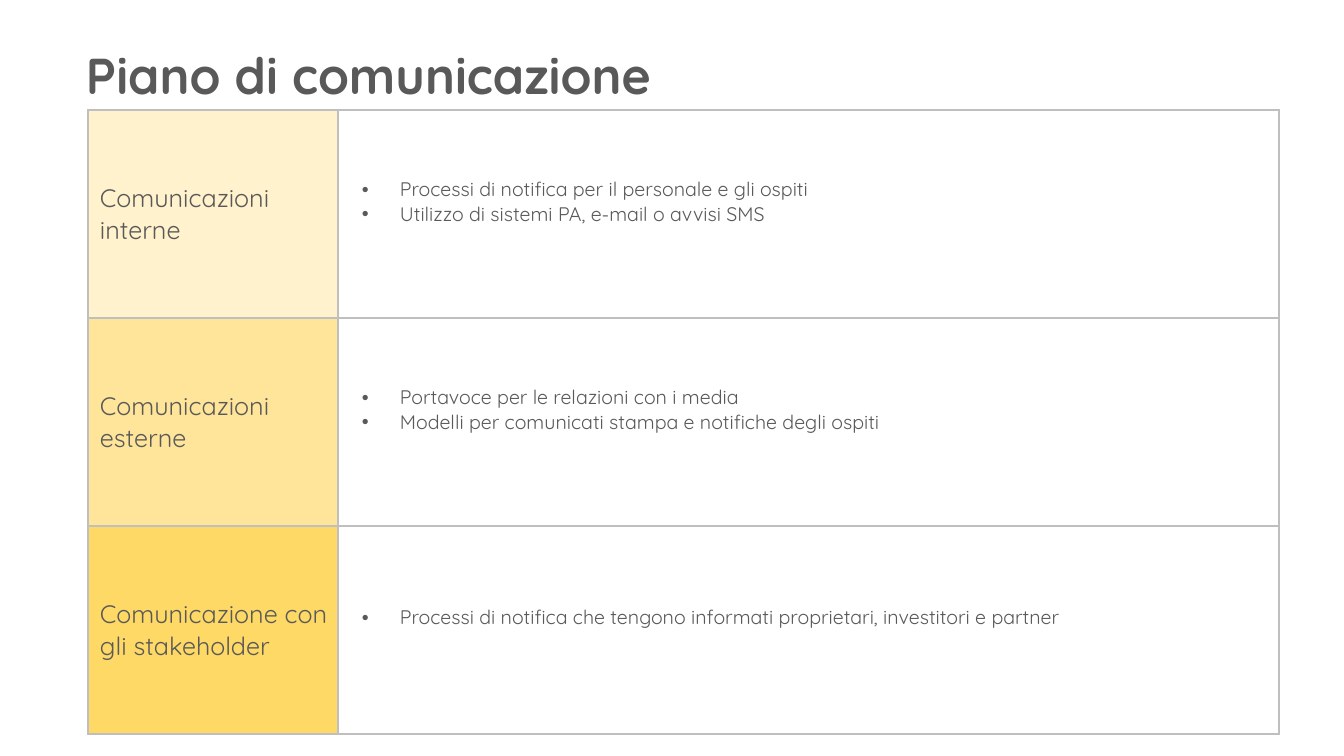
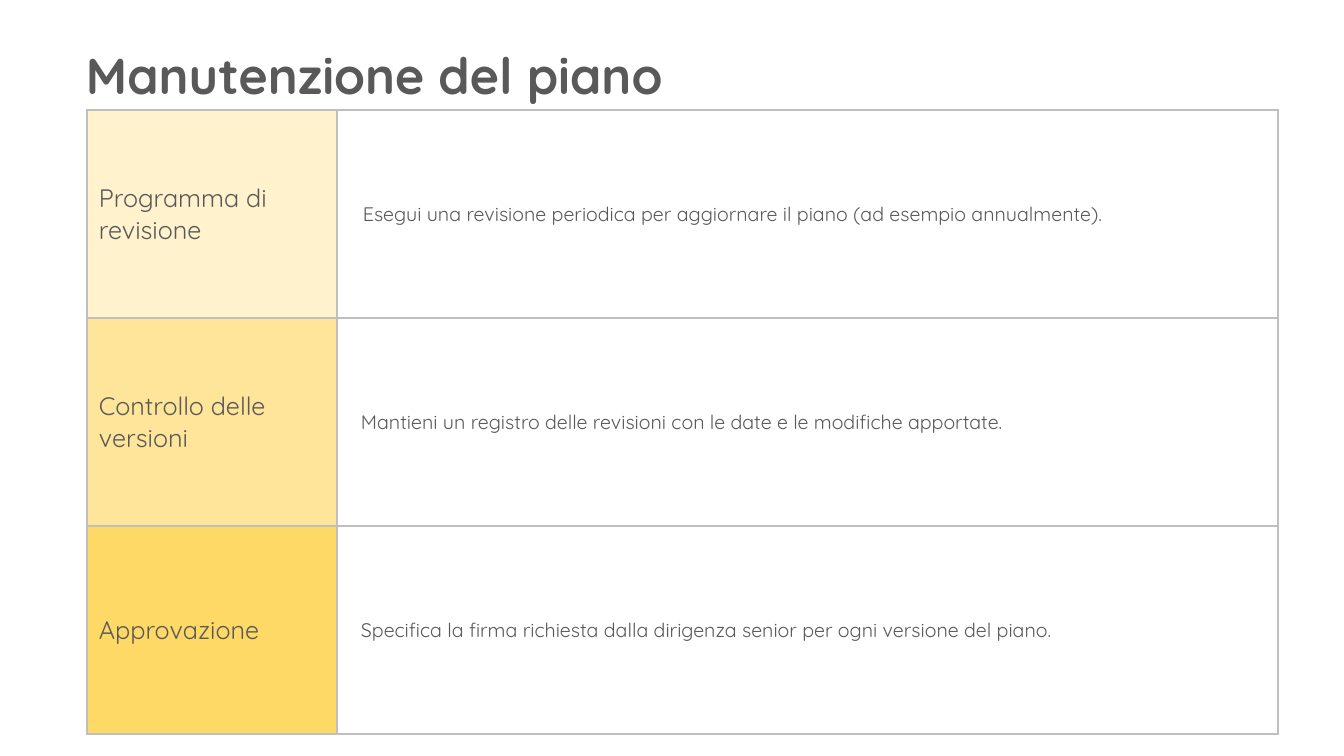
from lxml import etree
from pptx import Presentation
from pptx.dml.color import RGBColor
from pptx.enum.text import MSO_ANCHOR, MSO_AUTO_SIZE, PP_ALIGN
from pptx.oxml.ns import qn
from pptx.util import Pt

TOP, MID = MSO_ANCHOR.TOP, MSO_ANCHOR.MIDDLE
FIXED = MSO_AUTO_SIZE.NONE
LEFT = PP_ALIGN.LEFT
SCALE = 914400 / 100.8
FONT, INK, EDGE = "Quicksand", "595959", "BFBFBF"
TINTS = ["FFF2CC", "FFE599", "FFD966"]
HEAD = {"size": Pt(36), "bold": True, "name": FONT}
LABEL = {"size": Pt(18), "bold": False, "name": FONT}
BODY = {"size": Pt(14), "bold": False, "name": FONT}
SIDES = ["a:lnL", "a:lnR", "a:lnT", "a:lnB"]
COLS, ROW, TABLE_TOP = [250, 941], 208, 110
LINE = 25

SLIDES = [
    ("Piano di comunicazione", 88, True, [
        ("Comunicazioni interne", 57,
         ["Processi di notifica per il personale e gli ospiti",
          "Utilizzo di sistemi PA, e-mail o avvisi SMS"]),
        ("Comunicazioni esterne", 57,
         ["Portavoce per le relazioni con i media",
          "Modelli per comunicati stampa e notifiche degli ospiti"]),
        ("Comunicazione con gli stakeholder", 57,
         ["Processi di notifica che tengono informati proprietari, investitori e partner"]),
    ]),
    ("Manutenzione del piano", 87, False, [
        ("Programma di revisione", 21,
         ["Esegui una revisione periodica per aggiornare il piano (ad esempio annualmente)."]),
        ("Controllo delle versioni", 19,
         ["Mantieni un registro delle revisioni con le date e le modifiche apportate."]),
        ("Approvazione", 19,
         ["Specifica la firma richiesta dalla dirigenza senior per ogni versione del piano."]),
    ]),
]


def px(n):
    return round(n * SCALE)


def shade(code):
    return RGBColor.from_string(code)


def put(item, form):
    for key, value in form.items():
        setattr(item, key, value)


class Deck:
    """Holds the style and the current slide of the plan."""

    def __init__(self):
        self.prs = Presentation()
        put(self.prs, {"slide_width": px(1344), "slide_height": px(756)})
        self.slide = None

    def page(self, text):
        self.slide = self.prs.slides.add_slide(self.prs.slide_layouts[5])
        title = self.slide.shapes.title
        put(title, {"left": px(76), "top": px(39),
                    "width": px(1109), "height": px(72)})
        frame = title.text_frame
        put(frame, {"margin_left": px(10), "margin_right": px(10),
                    "margin_top": px(5), "margin_bottom": px(5),
                    "vertical_anchor": TOP, "word_wrap": True,
                    "auto_size": FIXED})
        self.words(frame, [text], HEAD)

    def words(self, frame, lines, form, inset=0, dots=False):
        for i, line in enumerate(lines):
            para = frame.add_paragraph() if i else frame.paragraphs[0]
            para.alignment = LEFT
            run = para.add_run()
            run.text = line
            put(run.font, form)
            run.font.color.rgb = shade(INK)
            props = para._p.get_or_add_pPr()
            props.set("marL", str(px(inset)))
            props.set("indent", str(px(-38 if dots else 0)))
            if dots:
                etree.SubElement(props, qn("a:buFont")).set("typeface", "Arial")
                etree.SubElement(props, qn("a:buChar")).set("char", "•")

    def edges(self, cell):
        props = cell._tc.get_or_add_tcPr()
        for i, side in enumerate(SIDES):
            line = etree.Element(qn(side), w=str(Pt(1)))
            fill = etree.SubElement(line, qn("a:solidFill"))
            etree.SubElement(fill, qn("a:srgbClr")).set("val", EDGE)
            props.insert(i, line)

    def cell(self, cell, lines, form, fill, inset, dots=False):
        put(cell, {"margin_left": px(5), "margin_right": px(5),
                   "margin_top": 0, "margin_bottom": px(LINE if dots else 0),
                   "vertical_anchor": MID})
        cell.fill.solid()
        cell.fill.fore_color.rgb = shade(fill)
        self.edges(cell)
        self.words(cell.text_frame, lines, form, inset, dots)

    def table(self, left, rows, dots):
        count = len(rows)
        table = self.slide.shapes.add_table(
            count, len(COLS), px(left), px(TABLE_TOP),
            px(sum(COLS)), px(ROW * count)).table
        put(table, {"first_row": False, "horz_banding": False})
        for col, width in zip(table.columns, COLS):
            col.width = px(width)
        for i, (label, inset, lines) in enumerate(rows):
            table.rows[i].height = px(ROW)
            self.cell(table.cell(i, 0), [label], LABEL, TINTS[i], 7)
            self.cell(table.cell(i, 1), lines, BODY, "FFFFFF", inset, dots)


def main():
    deck = Deck()
    for title, left, dots, rows in SLIDES:
        deck.page(title)
        deck.table(left, rows, dots)
    deck.prs.save("out.pptx")


if __name__ == "__main__":
    main()
